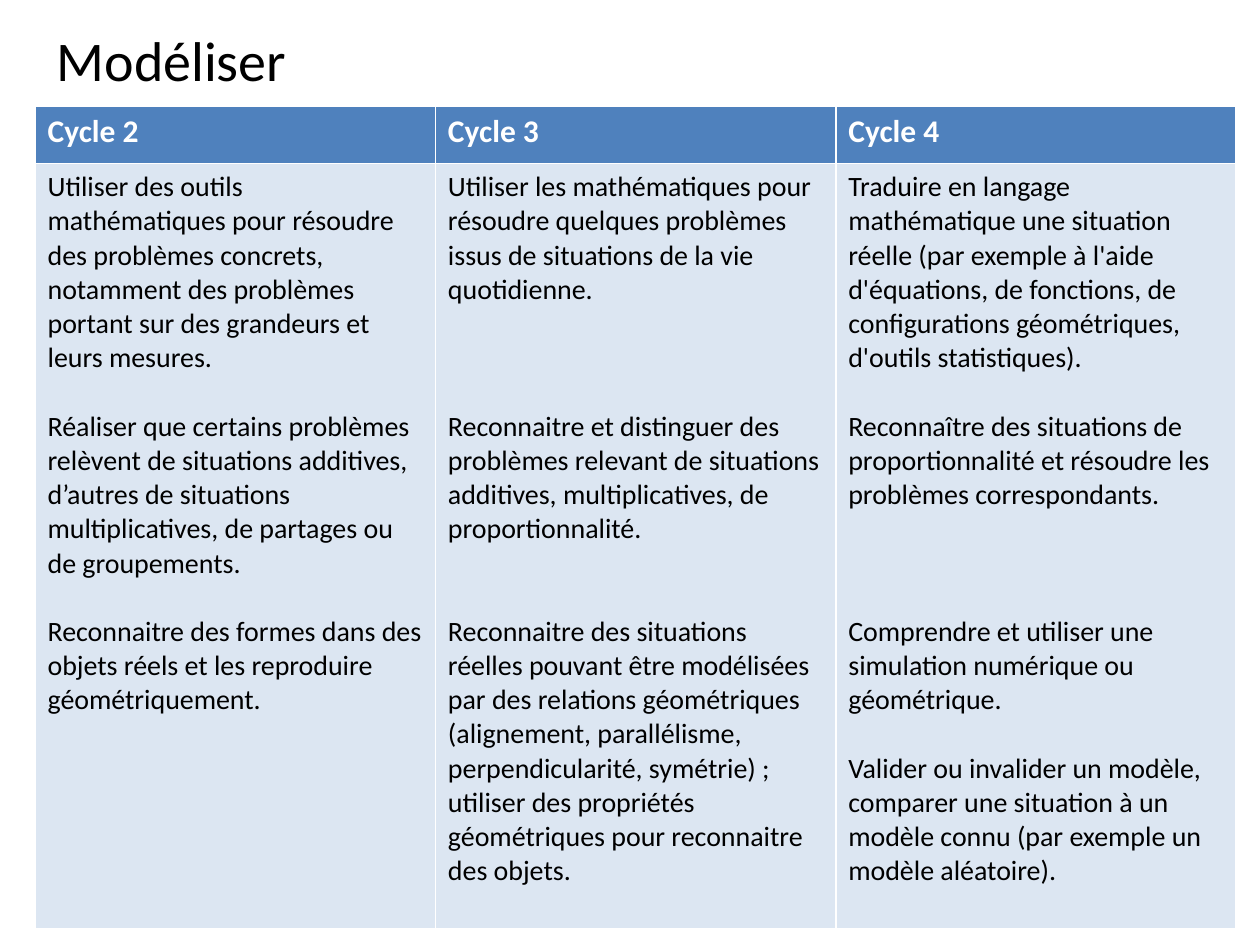
from pptx import Presentation
from pptx.dml.color import RGBColor
from pptx.enum.text import MSO_ANCHOR as Anchor, PP_ALIGN as Align
from pptx.util import Pt

BLACK = RGBColor(0x00, 0x00, 0x00)
WHITE = RGBColor(0xFF, 0xFF, 0xFF)
BLUE = RGBColor(0x4F, 0x81, 0xBD)
PALE_BLUE = RGBColor(0xDC, 0xE6, 0xF2)
FONT = "Calibri"
BODY_LINE = 19.53
HEADER_HEIGHT = 33

# Each skill is preceded by the number of empty lines that aligns it across cycles.
CYCLES = {
    "Cycle 2": [
        (0, "Utiliser des outils mathématiques pour résoudre des problèmes concrets, "
            "notamment des problèmes portant sur des grandeurs et leurs mesures."),
        (1, "Réaliser que certains problèmes relèvent de situations additives, d’autres de "
            "situations multiplicatives, de partages ou de groupements."),
        (1, "Reconnaitre des formes dans des objets réels et les reproduire géométriquement."),
    ],
    "Cycle 3": [
        (0, "Utiliser les mathématiques pour résoudre quelques problèmes issus de situations "
            "de la vie quotidienne."),
        (3, "Reconnaitre et distinguer des problèmes relevant de situations additives, "
            "multiplicatives, de proportionnalité."),
        (2, "Reconnaitre des situations réelles pouvant être modélisées par des relations "
            "géométriques (alignement, parallélisme, perpendicularité, symétrie) ; utiliser "
            "des propriétés géométriques pour reconnaitre des objets."),
    ],
    "Cycle 4": [
        (0, "Traduire en langage mathématique une situation réelle (par exemple à l'aide "
            "d'équations, de fonctions, de configurations géométriques, d'outils statistiques)."),
        (1, "Reconnaître des situations de proportionnalité et résoudre les problèmes "
            "correspondants."),
        (3, "Comprendre et utiliser une simulation numérique ou géométrique."),
        (1, "Valider ou invalider un modèle, comparer une situation à un modèle connu "
            "(par exemple un modèle aléatoire)."),
    ],
}


def style_font(para, size, color, bold=False):
    """Set the font of a whole paragraph."""
    font = para.font
    font.name, font.size, font.bold = FONT, Pt(size), bold
    font.color.rgb = color


def fill_cell(cell, color):
    """Give a table cell a solid background."""
    cell.fill.solid()
    cell.fill.fore_color.rgb = color


def add_title(page, text, left, top, width, height):
    """Place the title placeholder in the given box."""
    title = page.shapes.title
    title.left, title.top, title.width, title.height = map(Pt, (left, top, width, height))
    frame = title.text_frame
    frame.text = text
    frame.vertical_anchor = Anchor.TOP
    para = frame.paragraphs[0]
    para.alignment = Align.LEFT
    style_font(para, 32, BLACK)


def add_skills(cell, skills):
    """Write one cycle's skills, spaced by whole lines."""
    frame = cell.text_frame
    for index, (gap, text) in enumerate(skills):
        para = frame.add_paragraph() if index else frame.paragraphs[0]
        para.text = text
        para.space_before = Pt(gap * BODY_LINE)
        style_font(para, 16, BLACK)


def add_cycle_table(page, cycles, left, top, width, height):
    """Draw one equal column per cycle, with a header above its skills."""
    box = map(Pt, (left, top, width, height))
    table = page.shapes.add_table(2, len(cycles), *box).table
    table.rows[0].height = Pt(HEADER_HEIGHT)
    table.rows[1].height = Pt(height - HEADER_HEIGHT)
    for index, (name, skills) in enumerate(cycles.items()):
        header, body = table.cell(0, index), table.cell(1, index)
        fill_cell(header, BLUE)
        header.text = name
        style_font(header.text_frame.paragraphs[0], 18, WHITE, bold=True)
        fill_cell(body, PALE_BLUE)
        add_skills(body, skills)


def main():
    """Build the slide and save the deck."""
    deck = Presentation()
    deck.slide_width, deck.slide_height = Pt(720), Pt(540)
    page = deck.slides.add_slide(deck.slide_layouts[5])
    add_title(page, "Modéliser", 25.2, 11, 648, 48)
    add_cycle_table(page, CYCLES, 20, 60.5, 686.4, 470)
    deck.save("out.pptx")


if __name__ == "__main__":
    main()
